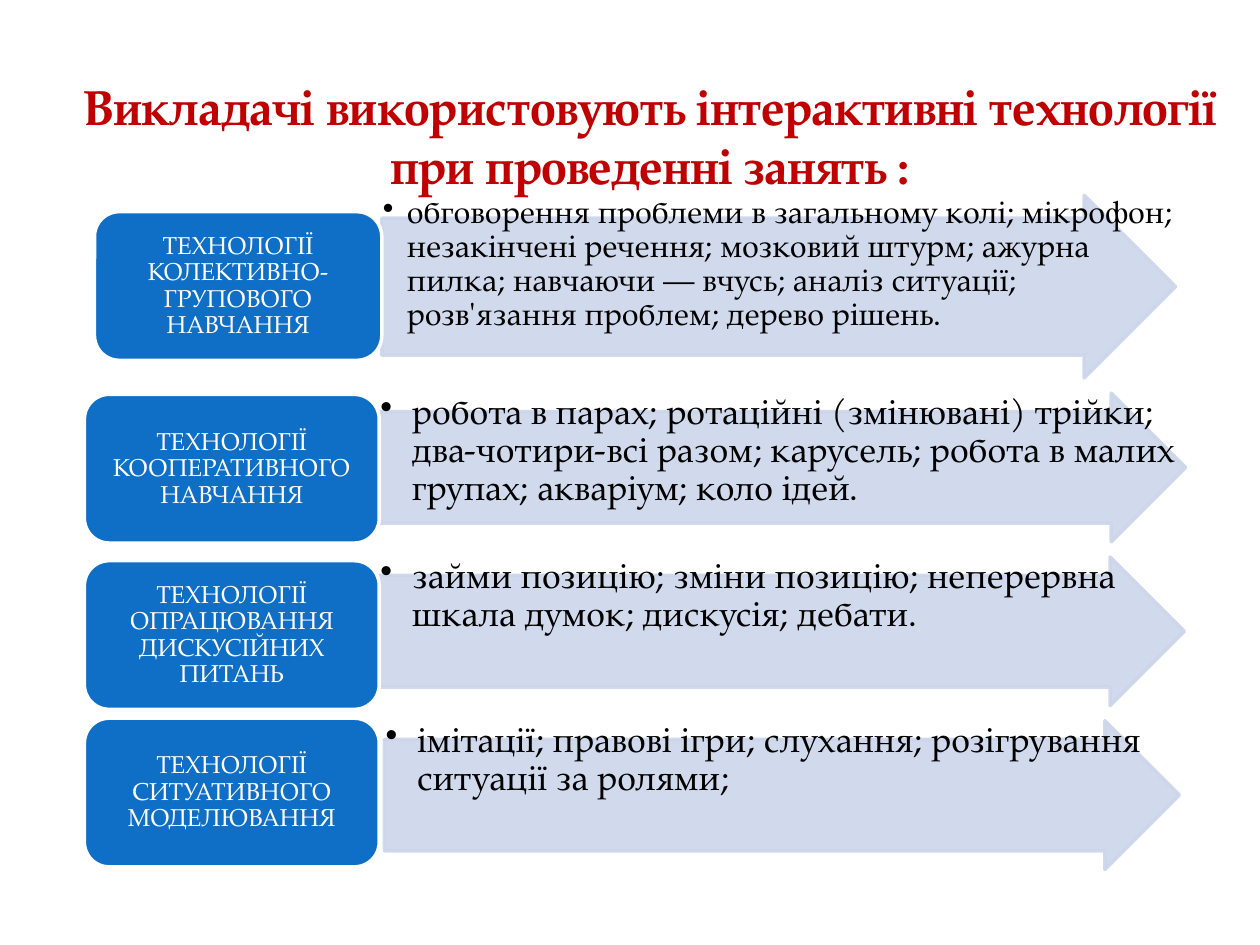
from dataclasses import dataclass

from lxml.etree import SubElement
from pptx import Presentation
from pptx.dml.color import RGBColor
from pptx.enum.shapes import MSO_SHAPE as Preset
from pptx.enum.text import MSO_ANCHOR as Anchor, PP_ALIGN as Align
from pptx.oxml.ns import qn
from pptx.util import Inches, Pt


@dataclass(frozen=True)
class Theme:
    """Colours, font and type sizes of the slide."""
    font: str = "TeX Gyre Pagella"
    title: RGBColor = RGBColor(0xC0, 0x00, 0x00)
    label_fill: RGBColor = RGBColor(0x0F, 0x6F, 0xC6)
    arrow_fill: RGBColor = RGBColor(0xCC, 0xD5, 0xEA)
    white: RGBColor = RGBColor(0xFF, 0xFF, 0xFF)
    black: RGBColor = RGBColor(0x00, 0x00, 0x00)
    arrow_opacity: int = 90
    title_size: int = 28
    label_size: int = 14
    outline: int = 2


THEME = Theme()
TITLE = "Викладачі використовують інтерактивні технології при проведенні занять :"
ROWS = [
    {"label": "ТЕХНОЛОГІЇ КОЛЕКТИВНО-ГРУПОВОГО НАВЧАННЯ",
     "methods": "обговорення проблеми в загальному колі; мікрофон; незакінчені речення; "
                "мозковий штурм; ажурна пилка; навчаючи — вчусь; аналіз ситуації; "
                "розв'язання проблем; дерево рішень.",
     "label_box": (0.75, 1.68, 2.28, 1.18), "arrow_box": (3.03, 1.55, 6.3, 1.45),
     "size": 18, "indent": 0.19},
    {"label": "ТЕХНОЛОГІЇ КООПЕРАТИВНОГО НАВЧАННЯ",
     "methods": "робота в парах; ротаційні (змінювані) трійки; два-чотири-всі разом; "
                "карусель; робота в малих групах; акваріум; коло ідей.",
     "label_box": (0.67, 3.13, 2.34, 1.18), "arrow_box": (3.01, 3.12, 6.4, 1.18),
     "size": 20, "indent": 0.25},
    {"label": "ТЕХНОЛОГІЇ ОПРАЦЮВАННЯ ДИСКУСІЙНИХ ПИТАНЬ",
     "methods": "займи позицію; зміни позицію; неперервна шкала думок; дискусія; дебати.",
     "label_box": (0.67, 4.45, 2.34, 1.18), "arrow_box": (3.01, 4.42, 6.39, 1.18),
     "size": 20, "indent": 0.25},
    {"label": "ТЕХНОЛОГІЇ СИТУАТИВНОГО МОДЕЛЮВАННЯ",
     "methods": "імітації; правові ігри; слухання; розігрування ситуації за ролями;",
     "label_box": (0.67, 5.7, 2.34, 1.18), "arrow_box": (3.05, 5.72, 6.31, 1.18),
     "size": 20, "indent": 0.25},
]


def apply_format(target, values):
    """Set every attribute named in a dict of format values."""
    for name, value in values.items():
        setattr(target, name, value)


def set_frame(shape, insets, anchor):
    """Wrap the text of a shape and set its margins and anchor."""
    left, top, right, bottom = map(Inches, insets)
    apply_format(shape.text_frame, {
        "word_wrap": True, "vertical_anchor": anchor,
        "margin_left": left, "margin_top": top,
        "margin_right": right, "margin_bottom": bottom})


def write_text(shape, text, size, color, paragraph_format, bold=False, bullet_indent=None):
    """Write one formatted paragraph, bulleted when an indent is given."""
    paragraph = shape.text_frame.paragraphs[0]
    paragraph.text = text
    apply_format(paragraph, paragraph_format)
    if bullet_indent:
        properties = paragraph._p.get_or_add_pPr()
        properties.set("marL", str(Inches(bullet_indent)))
        properties.set("indent", str(-Inches(bullet_indent)))
        SubElement(properties, qn("a:buChar")).set("char", "•")
    font = paragraph.runs[0].font
    apply_format(font, {"name": THEME.font, "size": Pt(size), "bold": bold})
    font.color.rgb = color


def add_box(slide, preset, box, fill, line):
    """Add a filled and outlined preset shape without a shadow."""
    shape = slide.shapes.add_shape(preset, *map(Inches, box))
    shape.shadow.inherit = False
    shape.fill.solid()
    shape.fill.fore_color.rgb = fill
    shape.line.color.rgb = line
    shape.line.width = Pt(THEME.outline)
    return shape


def add_arrow(slide, box):
    """Add a slightly transparent block arrow."""
    arrow = add_box(slide, Preset.RIGHT_ARROW, box, THEME.arrow_fill, THEME.arrow_fill)
    arrow.adjustments[0] = 0.75
    for color in arrow._element.spPr.iter(qn("a:srgbClr")):
        SubElement(color, qn("a:alpha")).set("val", str(THEME.arrow_opacity * 1000))


def add_methods(slide, box, text, size, indent):
    """Add the bulleted list of methods over an arrow."""
    methods = slide.shapes.add_textbox(*map(Inches, box))
    set_frame(methods, (0.01, 0.01, 0.01, 0.01), Anchor.TOP)
    write_text(methods, text, size, THEME.black,
               {"level": 1, "alignment": Align.LEFT, "line_spacing": 0.9},
               bullet_indent=indent)


def add_label(slide, box, text):
    """Add a rounded label naming a group of technologies."""
    label = add_box(slide, Preset.ROUNDED_RECTANGLE, box, THEME.label_fill, THEME.white)
    set_frame(label, (0, 0, 0, 0), Anchor.MIDDLE)
    write_text(label, text, THEME.label_size, THEME.white,
               {"alignment": Align.CENTER, "line_spacing": 0.9})


def add_title(slide):
    """Add the centred slide title."""
    title = slide.shapes.add_textbox(*map(Inches, (0.47, 0.84, 9.38, 1.19)))
    set_frame(title, (0, 0.05, 0, 0.49), Anchor.BOTTOM)
    write_text(title, TITLE, THEME.title_size, THEME.title,
               {"alignment": Align.CENTER}, bold=True)


def main():
    """Build and save the presentation."""
    presentation = Presentation()
    apply_format(presentation, {"slide_width": Inches(10), "slide_height": Inches(7.5)})
    slide = presentation.slides.add_slide(presentation.slide_layouts[6])
    for row in ROWS:
        add_arrow(slide, row["arrow_box"])
        add_methods(slide, row["arrow_box"], row["methods"], row["size"], row["indent"])
        add_label(slide, row["label_box"], row["label"])
    add_title(slide)
    presentation.save("out.pptx")


if __name__ == "__main__":
    main()
